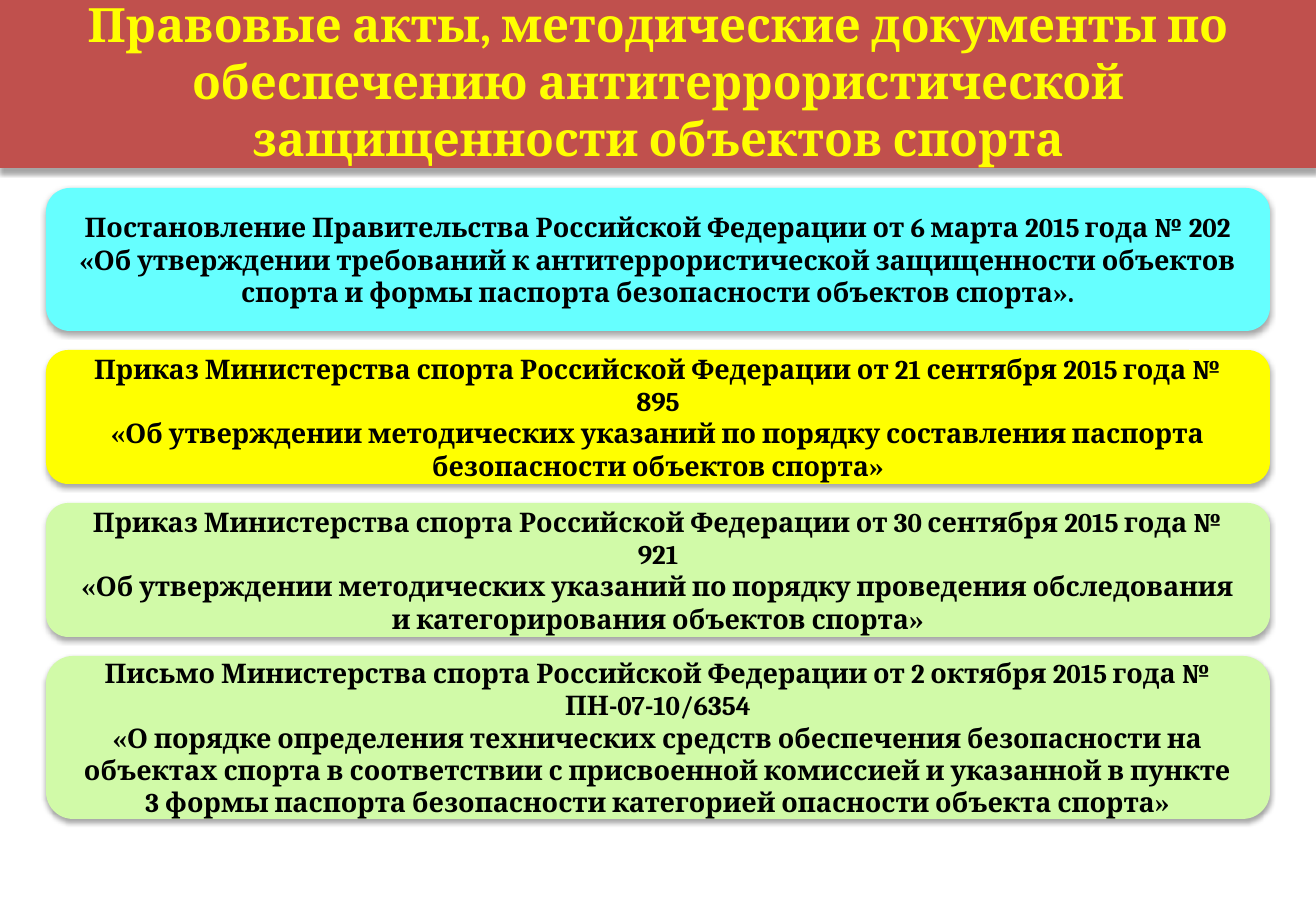
from lxml import etree
from pptx import Presentation
from pptx import util as u
from pptx.dml.color import RGBColor
from pptx.enum import shapes, text
from pptx.oxml import ns

PX = 914400 / 121.5
SLIDE_W, SLIDE_H = 1316, 911

RED = RGBColor(0xC0, 0x50, 0x4D)
YELLOW = RGBColor(0xFF, 0xFF, 0x00)
CYAN = RGBColor(0x66, 0xFF, 0xFF)
GREEN = RGBColor(0xD1, 0xFA, 0xA8)
BLACK = RGBColor(0x00, 0x00, 0x00)

FONT = "Cambria"
ACT_GAP = 19

HEADING = ("Правовые акты, методические документы по обеспечению "
           "антитеррористической защищенности объектов спорта")

# fill, height in px, issuing line, title of the act
ACTS = [
    (CYAN, 143,
     "Постановление Правительства Российской Федерации от 6 марта 2015 года № 202",
     "«Об утверждении требований к антитеррористической защищенности объектов "
     "спорта и формы паспорта безопасности объектов спорта»."),
    (YELLOW, 134,
     "Приказ Министерства спорта Российской Федерации от 21 сентября 2015 года № 895",
     "«Об утверждении методических указаний по порядку составления паспорта "
     "безопасности объектов спорта»"),
    (GREEN, 134,
     "Приказ Министерства спорта Российской Федерации от 30 сентября 2015 года № 921",
     "«Об утверждении методических указаний по порядку проведения обследования "
     "и категорирования объектов спорта»"),
    (GREEN, 163,
     "Письмо Министерства спорта Российской Федерации от 2 октября 2015 года "
     "№ ПН-07-10/6354",
     "«О порядке определения технических средств обеспечения безопасности на "
     "объектах спорта в соответствии с присвоенной комиссией и указанной в пункте "
     "3 формы паспорта безопасности категорией опасности объекта спорта»"),
]


def px(length):
    return u.Emu(round(length * PX))


def add_shadow(panel, blur, distance):
    """Drop a soft black shadow straight down; blur and distance in points."""
    panel.shadow.inherit = False
    effects = panel._element.spPr.find(ns.qn("a:effectLst"))
    outer = etree.SubElement(
        effects, ns.qn("a:outerShdw"), blurRad=str(u.Pt(blur)),
        dist=str(u.Pt(distance)), dir="5400000", rotWithShape="0")
    black = etree.SubElement(outer, ns.qn("a:srgbClr"), val="000000")
    etree.SubElement(black, ns.qn("a:alpha"), val="35000")


def add_panel(slide, kind, box, fill, lines, size, colour, insets):
    """Filled shape with bold centred lines; insets are left, top, right, bottom."""
    panel = slide.shapes.add_shape(kind, *map(px, box))
    panel.fill.solid()
    panel.fill.fore_color.rgb = fill
    panel.line.fill.background()
    frame = panel.text_frame
    frame.word_wrap = True
    frame.vertical_anchor = text.MSO_ANCHOR.MIDDLE
    (frame.margin_left, frame.margin_top,
     frame.margin_right, frame.margin_bottom) = map(px, insets)
    frame.text = "\n".join(lines)
    for paragraph in frame.paragraphs:
        paragraph.alignment = text.PP_ALIGN.CENTER
        for run in paragraph.runs:
            run.font.name = FONT
            run.font.size = u.Pt(size)
            run.font.bold = True
            run.font.color.rgb = colour
    return panel


def add_heading(slide, box):
    banner = add_panel(slide, shapes.MSO_SHAPE.RECTANGLE, box, RED,
                       [HEADING], 28, YELLOW, (13, 0, 13, 7))
    add_shadow(banner, 3, 3)


def add_acts(slide, left, top, width):
    """Stack the cards of the acts downwards with equal gaps."""
    for fill, height, issued, subject in ACTS:
        card = add_panel(slide, shapes.MSO_SHAPE.ROUNDED_RECTANGLE,
                         (left, top, width, height), fill,
                         [issued, subject], 16, BLACK, (21, 21, 21, 21))
        add_shadow(card, 3.1, 1.8)
        top += height + ACT_GAP


def main():
    deck = Presentation()
    deck.slide_width, deck.slide_height = px(SLIDE_W), px(SLIDE_H)
    slide = deck.slides.add_slide(deck.slide_layouts[6])
    add_heading(slide, (0, 0, SLIDE_W, 168))
    add_acts(slide, 46, 188, 1224)
    deck.save("out.pptx")


if __name__ == "__main__":
    main()
